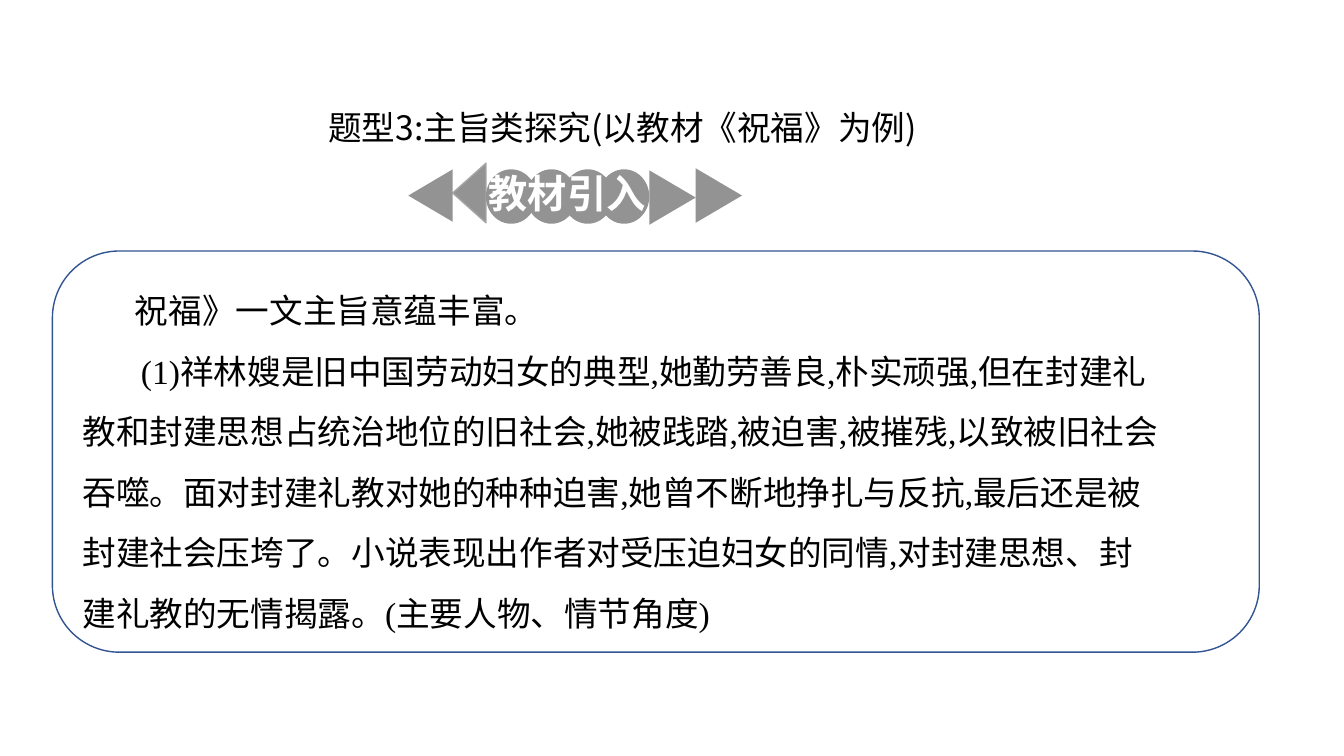
from lxml import etree
from pptx import Presentation, util as u
from pptx.dml.color import RGBColor
from pptx.enum import shapes, text
from pptx.oxml.ns import qn

WIDTH, HEIGHT = 13.33, 7.5
COLORS = {"ink": "000000", "badge": "939393", "badge_text": "FFFFFF",
          "edge": "A5A5A5", "frame": "325491"}
SANS, SERIF = "Noto Sans CJK SC", "Times New Roman"

TITLE = "题型3:主旨类探究(以教材《祝福》为例)"
BADGE = "教材引入"
# Each paragraph with its first-line indent in inches
THEMES = [
    ("祝福》一文主旨意蕴丰富。", 0.52),
    ("(1)祥林嫂是旧中国劳动妇女的典型,她勤劳善良,朴实顽强,但在封建礼教和封建思想"
     "占统治地位的旧社会,她被践踏,被迫害,被摧残,以致被旧社会吞噬。面对封建礼教对她的"
     "种种迫害,她曾不断地挣扎与反抗,最后还是被封建社会压垮了。小说表现出作者对受压迫"
     "妇女的同情,对封建思想、封建礼教的无情揭露。(主要人物、情节角度)", 0.58),
]


def rgb(name):
    return RGBColor.from_string(COLORS[name])


def box(left, top, width, height):
    return [u.Inches(v) for v in (left, top, width, height)]


def style(paragraph, size, color, latin, bold=False):
    font = paragraph.font
    font.size, font.bold, font.name = u.Pt(size), bold, latin
    font.color.rgb = rgb(color)
    defaults = paragraph._p.pPr.find(qn("a:defRPr"))
    etree.SubElement(defaults, qn("a:ea")).set("typeface", SANS)


def add_shape(slide, kind, place, fill=None, line=None, turn=0):
    shape = slide.shapes.add_shape(kind, *box(*place))
    shape.shadow.inherit = False
    shape.rotation = turn
    if fill:
        shape.fill.solid()
        shape.fill.fore_color.rgb = rgb(fill)
    else:
        shape.fill.background()
    if line:
        shape.line.color.rgb = rgb(line)
        shape.line.width = u.Pt(1)
    else:
        shape.line.fill.background()


def add_arrow(slide, place, turn, line=None):
    add_shape(slide, shapes.MSO_SHAPE.FLOWCHART_EXTRACT, place, "badge", line, turn)


def add_text(slide, place, wrap=True):
    frame = slide.shapes.add_textbox(*box(*place)).text_frame
    frame.word_wrap = wrap
    return frame


def add_title(slide):
    title = slide.shapes.title
    title.left, title.top, title.width, title.height = box(2.91, 1.01, 6.53, 0.5)
    frame = title.text_frame
    frame.text = TITLE
    frame.vertical_anchor = text.MSO_ANCHOR.TOP
    frame.auto_size = text.MSO_AUTO_SIZE.NONE
    heading = frame.paragraphs[0]
    heading.alignment = text.PP_ALIGN.CENTER
    heading.line_spacing = 1.0
    style(heading, 24, "ink", SANS)


def add_badge(slide):
    # Inner left arrow, then one disc behind each character
    add_arrow(slide, (4.36, 1.75, 0.59, 0.33), 270, "edge")
    for left in (4.82, 5.22, 5.58, 5.94):
        add_shape(slide, shapes.MSO_SHAPE.OVAL, (left, 1.68, 0.5, 0.54), "badge")
    label = add_text(slide, (4.75, 1.63, 1.8, 0.57)).paragraphs[0]
    label.text = BADGE
    style(label, 28, "badge_text", SANS, bold=True)
    # Outer arrows
    add_arrow(slide, (4.01, 1.72, 0.52, 0.44), 270)
    for left, top in ((6.4, 1.73), (6.86, 1.71)):
        add_arrow(slide, (left, top, 0.54, 0.46), 90)


def add_themes(slide):
    frame = add_text(slide, (0.72, 2.63, 10.92, 2.07))
    for i, (wording, indent) in enumerate(THEMES):
        paragraph = frame.add_paragraph() if i else frame.paragraphs[0]
        paragraph.text = wording
        paragraph.line_spacing = 1.5
        paragraph._p.get_or_add_pPr().set("indent", str(u.Inches(indent)))
        style(paragraph, 24, "ink", SERIF)
    add_shape(slide, shapes.MSO_SHAPE.ROUNDED_RECTANGLE,
              (0.52, 2.49, 11.97, 3.98), line="frame")


def main():
    deck = Presentation()
    deck.slide_width, deck.slide_height = u.Inches(WIDTH), u.Inches(HEIGHT)
    slide = deck.slides.add_slide(deck.slide_layouts[5])
    add_title(slide)
    add_badge(slide)
    add_themes(slide)
    deck.save("out.pptx")


if __name__ == "__main__":
    main()
